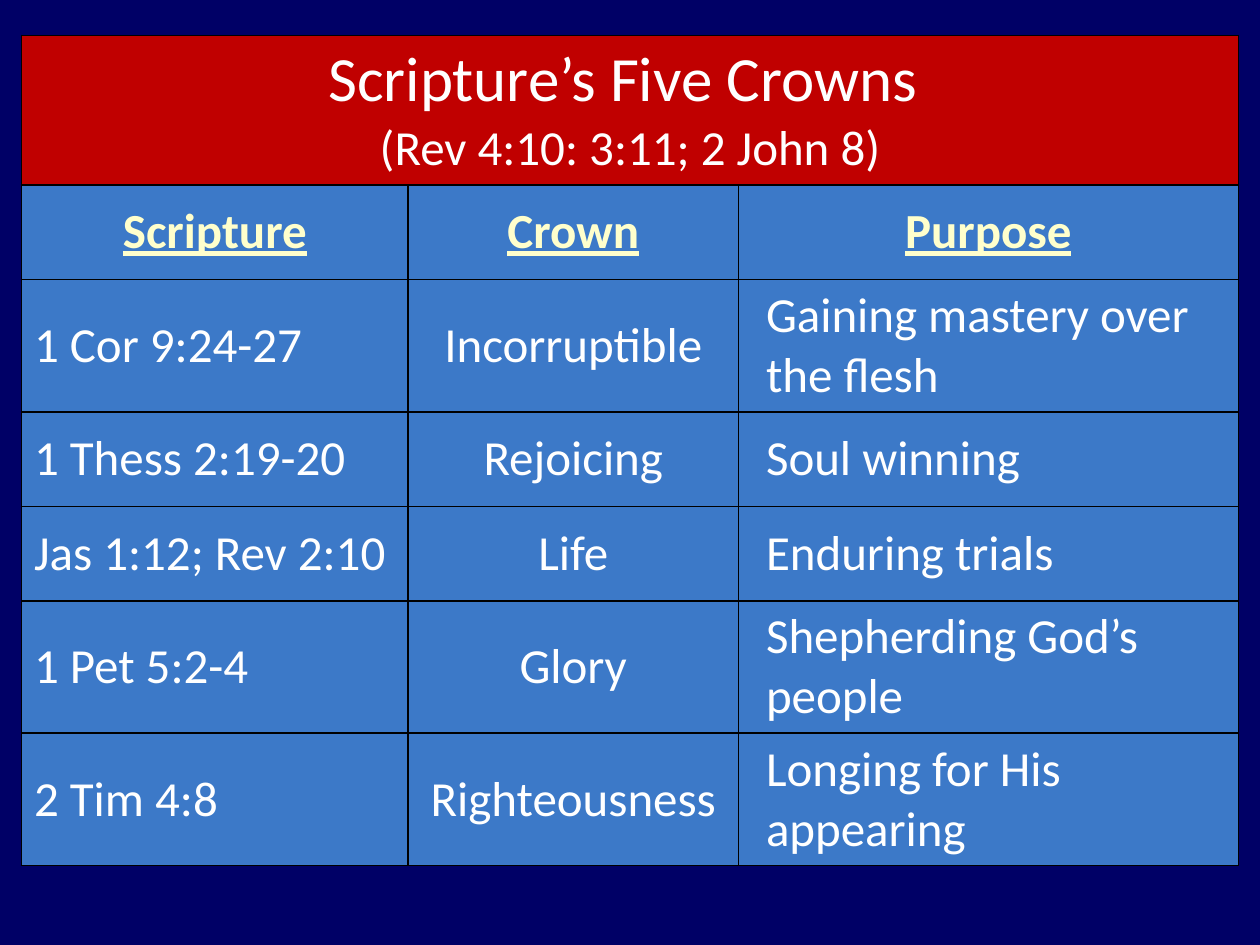
from lxml import etree
from pptx import Presentation
from pptx import util as u
from pptx.dml.color import RGBColor
from pptx.enum import text
from pptx.oxml import ns

COLORS = {"back": "000066", "banner": "C00000", "body": "3C79C8",
          "heading": "FFFFCC", "words": "FFFFFF", "rule": "000000"}
COLUMNS = [3.07, 2.62, 3.97]
ROWS = [0.75, 0.75, 0.9, 0.75, 0.75, 0.9, 0.9]
HEADINGS = ["Scripture", "Crown", "Purpose"]
CROWNS = [
    ["1 Cor 9:24-27", "Incorruptible", "Gaining mastery over the flesh"],
    ["1 Thess 2:19-20", "Rejoicing", "Soul winning"],
    ["Jas 1:12; Rev 2:10", "Life", "Enduring trials"],
    ["1 Pet 5:2-4", "Glory", "Shepherding God’s people"],
    ["2 Tim 4:8", "Righteousness", "Longing for His appearing"],
]


def style_cell(cell, fill):
    """Fill and rule a cell, and return its paragraph, spaced 20% before."""
    cell.fill.solid()
    cell.fill.fore_color.rgb = RGBColor.from_string(COLORS[fill])
    cell.vertical_anchor = text.MSO_ANCHOR.MIDDLE
    properties = cell._tc.get_or_add_tcPr()
    for place, side in enumerate(["lnL", "lnR", "lnT", "lnB"]):
        rule = etree.Element(ns.qn("a:" + side), w=str(u.Pt(1)))
        solid = etree.SubElement(rule, ns.qn("a:solidFill"))
        etree.SubElement(solid, ns.qn("a:srgbClr"), val=COLORS["rule"])
        properties.insert(place, rule)
    paragraph = cell.text_frame.paragraphs[0]
    before = etree.SubElement(paragraph._p.get_or_add_pPr(), ns.qn("a:spcBef"))
    etree.SubElement(before, ns.qn("a:spcPct"), val="20000")
    return paragraph


def add_run(paragraph, words, size=28, color="words", heading=False):
    run = paragraph.add_run()
    run.text = words
    run.font.name = "Calibri"
    run.font.size = u.Pt(size)
    run.font.bold = run.font.underline = heading
    run.font.color.rgb = RGBColor.from_string(COLORS[color])


deck = Presentation()
deck.slide_width, deck.slide_height = u.Inches(10), u.Inches(7.5)
slide = deck.slides.add_slide(deck.slide_layouts[6])
slide.background.fill.solid()
slide.background.fill.fore_color.rgb = RGBColor.from_string(COLORS["back"])

# Table grid
frame = slide.shapes.add_table(len(ROWS), len(COLUMNS), u.Inches(0.17), u.Inches(0.28),
                               u.Inches(sum(COLUMNS)), u.Inches(6.52))
crowns = frame.table
for column, width in zip(crowns.columns, COLUMNS):
    column.width = u.Inches(width)
for row, height in zip(crowns.rows, ROWS):
    row.height = u.Inches(height)
frame.height = u.Inches(6.52)

# Banner across all columns
crowns.cell(0, 0).merge(crowns.cell(0, len(COLUMNS) - 1))
banner = [style_cell(cell, "banner") for cell in crowns.rows[0].cells][0]
banner.alignment = text.PP_ALIGN.CENTER
add_run(banner, "Scripture’s Five Crowns ", size=36)
banner.add_line_break()
add_run(banner, "(Rev 4:10: 3:11; 2 John 8)")

# Column headings
for column, heading in enumerate(HEADINGS):
    paragraph = style_cell(crowns.cell(1, column), "body")
    paragraph.alignment = text.PP_ALIGN.CENTER
    add_run(paragraph, heading, color="heading", heading=True)

# One row per crown: passage left, crown centred, purpose indented
for row, crown in enumerate(CROWNS, start=2):
    for column, words in enumerate(crown):
        paragraph = style_cell(crowns.cell(row, column), "body")
        paragraph.alignment = text.PP_ALIGN.CENTER if column == 1 else text.PP_ALIGN.LEFT
        if column == 2:
            paragraph._p.get_or_add_pPr().set("marL", str(u.Inches(0.12)))
        add_run(paragraph, words)

deck.save("out.pptx")
